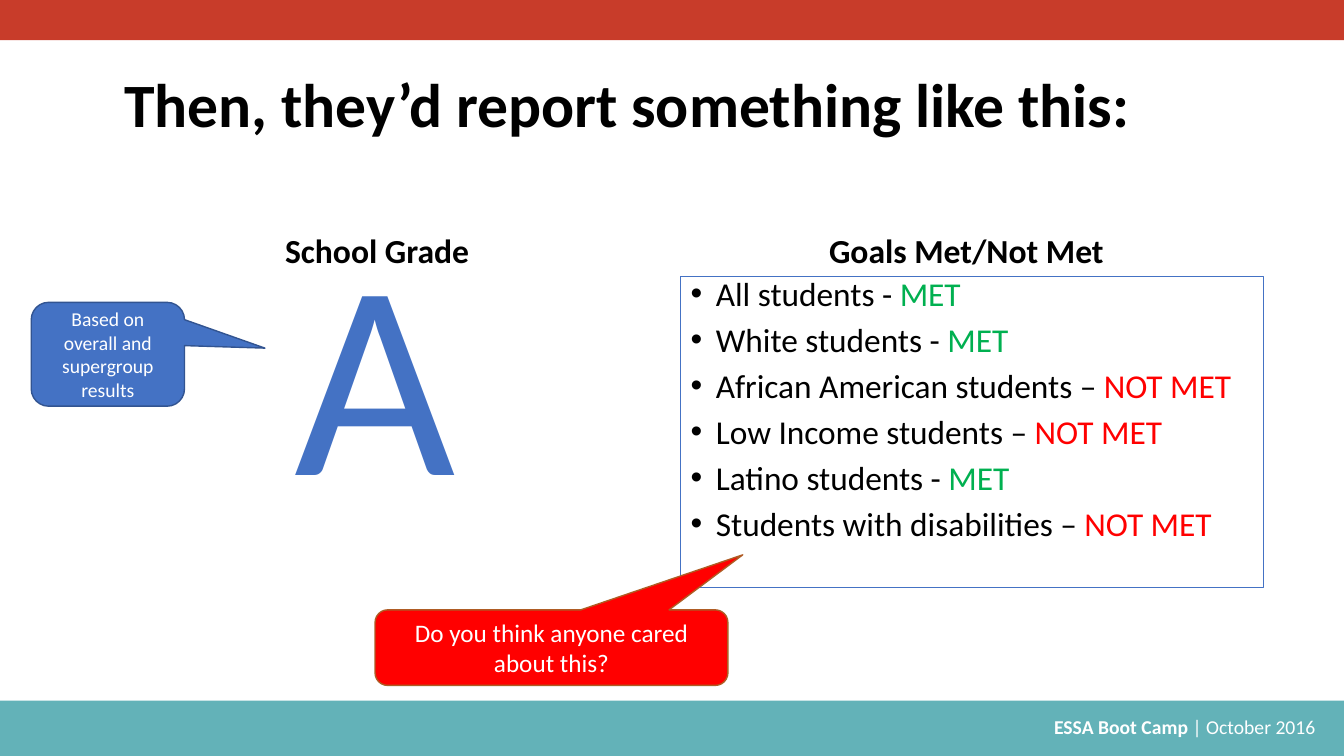
from copy import deepcopy
from lxml.etree import SubElement
from pptx import Presentation
from pptx.dml.color import RGBColor
from pptx.enum.shapes import MSO_SHAPE
from pptx.enum.text import MSO_ANCHOR, MSO_AUTO_SIZE, PP_ALIGN
from pptx.oxml.ns import qn
from pptx.util import Inches, Pt

WHITE, BLACK, BLUE, RED, GREEN = "FFFFFF", "000000", "4472C4", "FF0000", "00B050"
STATUS_COLORS = {"MET": GREEN, "NOT MET": RED}
GOALS = [
    ("All students - ", "MET"),
    ("White students - ", "MET"),
    ("African American students – ", "NOT MET"),
    ("Low Income students – ", "NOT MET"),
    ("Latino students - ", "MET"),
    ("Students with disabilities – ", "NOT MET"),
]


def rgb(value):
    return RGBColor.from_string(value)


def apply(target, formats):
    for name, value in formats.items():
        setattr(target, name, value)


class SlideBuilder:
    font = "Calibri"

    def __init__(self, s):
        self.s = s

    def place(self, sp, box):
        apply(sp, dict(zip(("left", "top", "width", "height"), map(Inches, box))))

    def paint(self, sp, fill, line=None):
        sp.fill.solid()
        sp.fill.fore_color.rgb = rgb(fill)
        if line:
            sp.line.color.rgb = rgb(line)
            sp.line.width = Pt(1)
        else:
            sp.line.fill.background()

    def add_runs(self, p, runs, size, **formats):
        apply(p, formats)
        for text, color, bold in runs:
            r = p.add_run()
            r.text = text
            apply(r.font, {"name": self.font, "size": Pt(size), "bold": bold})
            r.font.color.rgb = rgb(color)

    def frame(self, sp, anchor):
        tf = sp.text_frame
        apply(tf, {"word_wrap": True, "auto_size": MSO_AUTO_SIZE.NONE, "vertical_anchor": anchor})
        return tf

    def placeholder(self, idx, box, anchor):
        sp = self.s.placeholders[idx]
        self.place(sp, box)
        return sp, self.frame(sp, anchor)

    def heading(self, idx, box, text, size, anchor, **formats):
        sp, tf = self.placeholder(idx, box, anchor)
        self.add_runs(tf.paragraphs[0], [(text, BLACK, True)], size, line_spacing=0.9, **formats)

    def goal_list(self, idx, box, goals):
        sp, tf = self.placeholder(idx, box, MSO_ANCHOR.TOP)
        self.paint(sp, WHITE, BLUE)
        for i, (group, status) in enumerate(goals):
            p = tf.add_paragraph() if i else tf.paragraphs[0]
            runs = [(group, BLACK, False), (status, STATUS_COLORS[status], False)]
            self.add_runs(p, runs, 23.8, line_spacing=0.8, space_before=Pt(10))
            pPr = p._p.get_or_add_pPr()
            pPr.set("marL", str(Inches(0.25)))
            pPr.set("indent", str(Inches(-0.25)))
            SubElement(pPr, qn("a:buFont"), typeface="Arial")
            SubElement(pPr, qn("a:buChar"), char="•")

    def bar(self, box, fill):
        sp = self.s.shapes.add_shape(MSO_SHAPE.RECTANGLE, *map(Inches, box))
        sp.shadow.inherit = False
        self.paint(sp, fill)

    def text(self, box, runs, size, align):
        sp = self.s.shapes.add_textbox(*map(Inches, box))
        p = self.frame(sp, MSO_ANCHOR.TOP).paragraphs[0]
        self.add_runs(p, runs, size, alignment=align)
        return p.runs[0]

    def gradient(self, r, colors, angle):
        fill = r.font.fill
        fill.gradient()
        fill.gradient_angle = angle
        stops = r._r.rPr.find(qn("a:gradFill")).find(qn("a:gsLst"))
        while len(stops) < len(colors):
            stops.append(deepcopy(stops[0]))
        for i, (stop, color) in enumerate(zip(fill.gradient_stops, colors)):
            stop.color.rgb = rgb(color)
            stop.position = i / (len(colors) - 1)

    def callout(self, box, tip, fill, line, text, size):
        sp = self.s.shapes.add_shape(MSO_SHAPE.ROUNDED_RECTANGULAR_CALLOUT, *map(Inches, box))
        sp.shadow.inherit = False
        for i, value in enumerate((*tip, 0.167)):
            sp.adjustments[i] = value
        self.paint(sp, fill, line)
        p = self.frame(sp, MSO_ANCHOR.MIDDLE).paragraphs[0]
        self.add_runs(p, [(text, WHITE, False)], size, alignment=PP_ALIGN.CENTER)


def main():
    prs = Presentation()
    apply(prs, {"slide_width": Inches(13.33), "slide_height": Inches(7.5)})
    s = prs.slides.add_slide(prs.slide_layouts.get_by_name("Comparison"))
    b = SlideBuilder(s)
    unused = s.placeholders[2]._element
    unused.getparent().remove(unused)

    b.bar((0, 6.95, 13.33, 0.55), "63B2B8")
    b.bar((0, 0, 13.33, 0.4), "C83C2A")
    b.text((4.8, 7.04, 8.39, 0.34),
           [("ESSA Boot Camp ", WHITE, True), ("| October 2016 ", WHITE, False)],
           14, PP_ALIGN.RIGHT)

    b.heading(0, (1.13, 0.58, 11.67, 0.97), "Then, they’d report something like this:",
              44, MSO_ANCHOR.MIDDLE, alignment=PP_ALIGN.LEFT)
    for idx, left, width, text in ((1, 0.92, 5.64, "School Grade"),
                                   (3, 6.75, 5.67, "Goals Met/Not Met")):
        b.heading(idx, (left, 1.84, width, 0.9), text, 24, MSO_ANCHOR.BOTTOM,
                  alignment=PP_ALIGN.CENTER, space_before=Pt(10))
    b.goal_list(4, (6.75, 2.74, 5.78, 3.09), GOALS)

    grade = b.text((2.59, 1.9, 2.27, 3.45), [("A", BLUE, False)], 199, PP_ALIGN.CENTER)
    b.gradient(grade, ("203864", BLUE, "8FAADC"), 270)

    b.callout((3.72, 6.05, 3.5, 0.75), (0.542, -1.228), RED, "AF5C24",
              "Do you think anyone cared about this?", 18)
    b.callout((0.31, 3, 1.52, 1.03), (1.025, -0.059), BLUE, "325491",
              "Based on overall and supergroup results", 14)
    prs.save("out.pptx")


if __name__ == "__main__":
    main()
